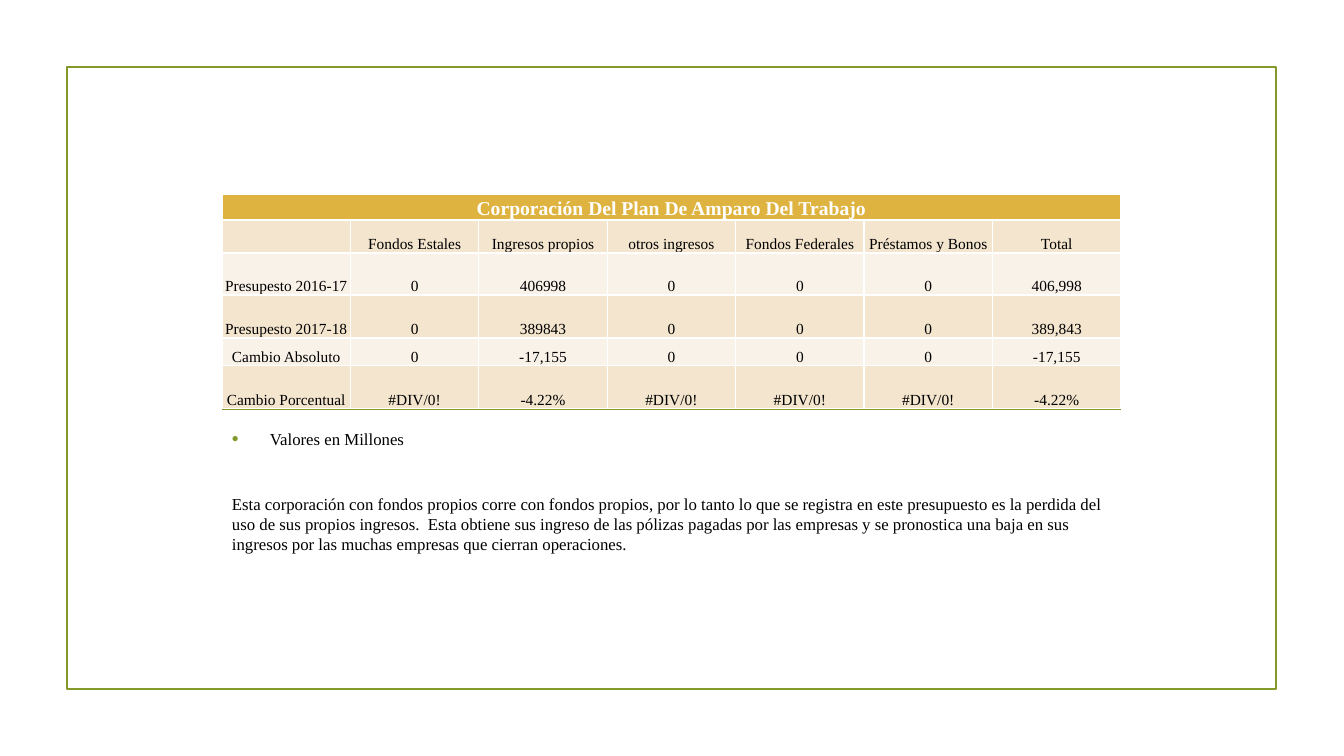
from lxml import etree
from pptx import Presentation
from pptx import util as u
from pptx.dml.color import RGBColor
from pptx.enum import shapes, text
from pptx.oxml.ns import qn

TITLE = "Corporación Del Plan De Amparo Del Trabajo"
BUDGET = [
    ("", "Fondos Estales", "Ingresos propios", "otros ingresos",
     "Fondos Federales", "Préstamos y Bonos", "Total"),
    ("Presupesto 2016-17", "0", "406998", "0", "0", "0", "406,998"),
    ("Presupesto 2017-18", "0", "389843", "0", "0", "0", "389,843"),
    ("Cambio Absoluto", "0", "-17,155", "0", "0", "0", "-17,155"),
    ("Cambio Porcentual", "#DIV/0!", "-4.22%", "#DIV/0!", "#DIV/0!", "#DIV/0!", "-4.22%"),
]
UNITS = "Valores en Millones"
EXPLANATION = (
    "Esta corporación con fondos propios corre con fondos propios, por lo tanto lo que "
    "se registra en este presupuesto es la perdida del uso de sus propios ingresos.  "
    "Esta obtiene sus ingreso de las pólizas pagadas por las empresas y se pronostica "
    "una baja en sus ingresos por las muchas empresas que cierran operaciones."
)
FONT = "Times New Roman"
GREEN, GOLD, WHITE, BLACK = "83992A", "DEB340", "FFFFFF", "000000"
BANDS = ["F3E5CE", "F9F2E8"]
SLIDE = (1344, 756)
FRAME = (67, 67, 1209, 622)
LEFT, TOP, WIDTH = 222, 194, 899
ROW_HEIGHTS = [26, 33, 42, 43, 28, 43]
RULE_Y = 409
NOTES = (LEFT, 424, WIDTH, 187)


def px(n):
    return u.Emu(round(n * 914400 / 100.8))


def color(value):
    return RGBColor.from_string(value)


def add_run(paragraph, words, size, ink, bold=False):
    run = paragraph.add_run()
    run.text = words
    run.font.name = FONT
    run.font.size = u.Pt(size)
    run.font.bold = bold
    run.font.color.rgb = color(ink)


def add_border(cell, side, points):
    properties = cell._tc.get_or_add_tcPr()
    edge = etree.SubElement(properties, qn(f"a:ln{side}"), w=str(u.Pt(points)))
    fill = etree.SubElement(edge, qn("a:solidFill"))
    etree.SubElement(fill, qn("a:srgbClr"), val=WHITE)


def style_cell(cell, row, words):
    cell.margin_left = cell.margin_right = cell.margin_top = px(1)
    cell.margin_bottom = 0
    cell.vertical_anchor = text.MSO_ANCHOR.BOTTOM
    for side in "LRTB":
        heavy = (row, side) in [(0, "B"), (1, "T")]
        add_border(cell, side, 1.5 if heavy else 1)
    cell.fill.solid()
    cell.fill.fore_color.rgb = color(BANDS[(row - 1) % 2] if row else GOLD)
    paragraph = cell.text_frame.paragraphs[0]
    paragraph.alignment = text.PP_ALIGN.CENTER
    size = 11 if row else 14
    if words:
        add_run(paragraph, words, size, BLACK if row else WHITE, not row)
    else:
        paragraph.font.size = u.Pt(size)


def add_bullet(paragraph):
    properties = paragraph._p.get_or_add_pPr()
    properties.set("marL", str(px(38)))
    properties.set("indent", str(-px(38)))
    tint = etree.SubElement(properties, qn("a:buClr"))
    etree.SubElement(tint, qn("a:srgbClr"), val=GREEN)
    etree.SubElement(properties, qn("a:buSzPct"), val="115000")
    etree.SubElement(properties, qn("a:buFont"), typeface="Arial")
    etree.SubElement(properties, qn("a:buChar"), char="•")


deck = Presentation()
deck.slide_width, deck.slide_height = map(px, SLIDE)
slide = deck.slides.add_slide(deck.slide_layouts[6])

frame = slide.shapes.add_shape(shapes.MSO_SHAPE.RECTANGLE, *map(px, FRAME))
frame.shadow.inherit = False
frame.fill.background()
frame.line.color.rgb = color(GREEN)
frame.line.width = u.Pt(1.25)

rule = slide.shapes.add_connector(
    shapes.MSO_CONNECTOR.STRAIGHT, px(LEFT), px(RULE_Y), px(LEFT + WIDTH), px(RULE_Y))
rule.line.color.rgb = color(GREEN)
rule.line.width = u.Pt(1.25)
etree.SubElement(rule._element.spPr, qn("a:effectLst"))

notes = slide.shapes.add_textbox(*map(px, NOTES)).text_frame
notes.word_wrap = True
units = notes.paragraphs[0]
add_bullet(units)
add_run(units, UNITS, 12, BLACK)
explanation = notes.add_paragraph()
explanation.space_before = u.Pt(32)
add_run(explanation, EXPLANATION, 12, BLACK)

rows = [(TITLE,) + ("",) * (len(BUDGET[0]) - 1)] + BUDGET
budget = slide.shapes.add_table(
    len(rows), len(rows[0]), px(LEFT), px(TOP), px(WIDTH), px(sum(ROW_HEIGHTS))).table
for column in budget.columns:
    column.width = px(WIDTH / len(rows[0]))
for r, (height, entries) in enumerate(zip(ROW_HEIGHTS, rows)):
    budget.rows[r].height = px(height)
    for c, words in enumerate(entries):
        style_cell(budget.cell(r, c), r, words)
budget.cell(0, 0).merge(budget.cell(0, len(rows[0]) - 1))

deck.save("out.pptx")
